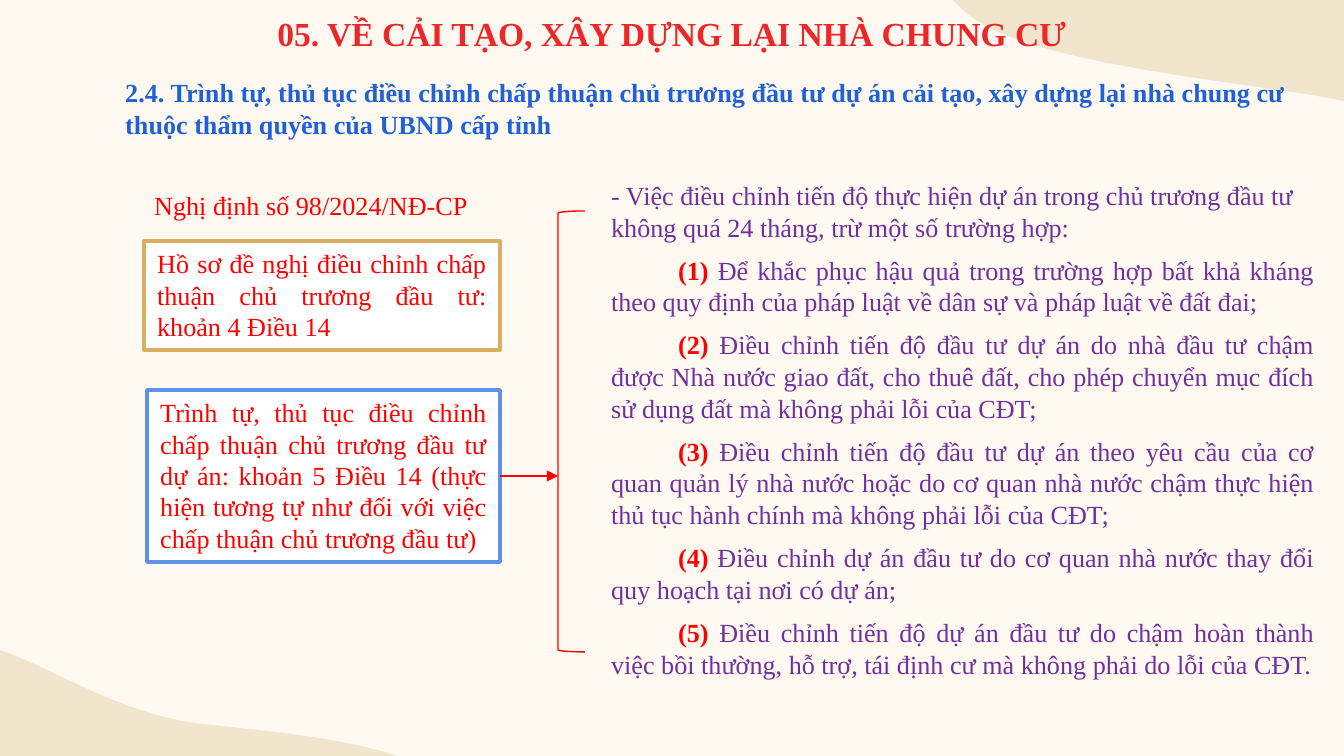
from dataclasses import dataclass

from lxml.etree import SubElement
from pptx import Presentation
from pptx.dml.color import RGBColor
from pptx.enum.shapes import MSO_CONNECTOR, MSO_SHAPE
from pptx.enum.text import MSO_ANCHOR, MSO_AUTO_SIZE, PP_ALIGN
from pptx.oxml.ns import qn
from pptx.util import Pt

SCALE = 914400 / 134.4
SLIDE_W, SLIDE_H = 1344, 756


@dataclass(frozen=True)
class Theme:
    """Colours, font and type sizes of the slide."""
    background: str = "FFF9F1"
    wave: str = "F2E5CE"
    title: str = "ED2727"
    subtitle: str = "2061D6"
    accent: str = "FF0000"
    body: str = "7030A0"
    box_fill: str = "FFFFFF"
    dossier_border: str = "D9AE60"
    procedure_border: str = "6191E7"
    font: str = "Times New Roman"
    title_size: int = 18
    body_size: int = 14


THEME = Theme()

CASES = [
    "Để khắc phục hậu quả trong trường hợp bất khả kháng theo quy định của pháp luật về dân sự và pháp luật về đất đai;",
    "Điều chỉnh tiến độ đầu tư dự án do nhà đầu tư chậm được Nhà nước giao đất, cho thuê đất, cho phép chuyển mục đích sử dụng đất mà không phải lỗi của CĐT;",
    "Điều chỉnh tiến độ đầu tư dự án theo yêu cầu của cơ quan quản lý nhà nước hoặc do cơ quan nhà nước chậm thực hiện thủ tục hành chính mà không phải lỗi của CĐT;",
    "Điều chỉnh dự án đầu tư do cơ quan nhà nước thay đổi quy hoạch tại nơi có dự án;",
    "Điều chỉnh tiến độ dự án đầu tư do chậm hoàn thành việc bồi thường, hỗ trợ, tái định cư mà không phải do lỗi của CĐT.",
]


def px(length):
    """Turn px into EMU."""
    return round(length * SCALE)


def emu(box):
    """Turn a box in px into EMU values."""
    return [px(length) for length in box]


def rgb(colour):
    """Read a hex colour."""
    return RGBColor.from_string(colour)


def style(paragraph, colour, size=THEME.body_size, bold=False, align=PP_ALIGN.LEFT):
    """Set font and alignment of a paragraph."""
    font = paragraph.font
    font.name, font.size, font.bold = THEME.font, Pt(size), bold
    font.color.rgb = rgb(colour)
    paragraph.alignment = align


def add_text(slide, box, text, colour, wrap=True, **styling):
    """Add a text box with one paragraph and return its frame."""
    frame = slide.shapes.add_textbox(*emu(box)).text_frame
    frame.word_wrap = wrap
    frame.auto_size = MSO_AUTO_SIZE.SHAPE_TO_FIT_TEXT
    frame.text = text
    style(frame.paragraphs[0], colour, **styling)
    return frame


def bezier(start, c1, c2, end, steps=24):
    """Return points along a cubic curve, without its start."""
    ts = [step / steps for step in range(1, steps + 1)]
    return [tuple((1 - t) ** 3 * a + 3 * t * (1 - t) ** 2 * b + 3 * t * t * (1 - t) * c + t ** 3 * d
                  for a, b, c, d in zip(start, c1, c2, end)) for t in ts]


def add_wave(slide, origin, lead, curves, closing):
    """Draw a background wave from straight and curved edges."""
    outline = list(lead)
    for c1, c2, end in curves:
        outline += bezier(outline[-1], c1, c2, end)
    outline += closing
    points = [(px(origin[0] + x), px(origin[1] + y)) for x, y in outline]
    builder = slide.shapes.build_freeform(*points[0])
    builder.add_line_segments(points[1:], close=True)
    wave = builder.convert_to_shape()
    wave.shadow.inherit = False
    wave.fill.solid()
    wave.fill.fore_color.rgb = rgb(THEME.wave)
    wave.line.fill.background()


def add_background(slide, box):
    """Paint the background with a wave in two corners of the box."""
    left, top, width, height = box
    slide.background.fill.solid()
    slide.background.fill.fore_color.rgb = rgb(THEME.background)
    add_wave(slide, (left + width - 391, top), [(391, 0), (391, 101)],
             [((380, 99), (370, 97), (359, 95)), ((215, 73), (43, 56), (0, 0))], [])
    add_wave(slide, (left, top + height - 106), [(0, 0)],
             [((52, 18), (120, 63), (195, 73)), ((263, 81), (341, 87), (397, 106))], [(0, 106)])


def add_header(slide, box):
    """Place the title and the section heading."""
    left, top, width, _ = box
    title = add_text(slide, (left, top + 1, width, 65), "05. VỀ CẢI TẠO, XÂY DỰNG LẠI NHÀ CHUNG CƯ",
                     THEME.title, size=THEME.title_size, bold=True, align=PP_ALIGN.CENTER)
    title.auto_size = MSO_AUTO_SIZE.NONE
    title.vertical_anchor = MSO_ANCHOR.BOTTOM
    title.margin_top = title.margin_bottom = px(13)
    add_text(slide, (left + 112, top + 70, 1189, 77),
             "2.4. Trình tự, thủ tục điều chỉnh chấp thuận chủ trương đầu tư dự án cải tạo, xây dựng lại "
             "nhà chung cư thuộc thẩm quyền của UBND cấp tỉnh", THEME.subtitle, bold=True)


def add_framed_text(slide, box, text, border):
    """Add a white rectangle with a coloured border and justified text."""
    rectangle = slide.shapes.add_shape(MSO_SHAPE.RECTANGLE, *emu(box))
    rectangle.shadow.inherit = False
    rectangle.fill.solid()
    rectangle.fill.fore_color.rgb = rgb(THEME.box_fill)
    rectangle.line.color.rgb = rgb(border)
    rectangle.line.width = Pt(2)
    frame = rectangle.text_frame
    frame.word_wrap = True
    frame.auto_size = MSO_AUTO_SIZE.SHAPE_TO_FIT_TEXT
    frame.vertical_anchor = MSO_ANCHOR.TOP
    frame.text = text
    style(frame.paragraphs[0], THEME.accent, align=PP_ALIGN.JUSTIFY)
    return rectangle


def add_decree(slide, box):
    """Place the decree label and its two boxes; return the procedure box."""
    left, top, width, _ = box
    add_text(slide, (left, top, 349, 46), "Nghị định số 98/2024/NĐ-CP", THEME.accent, wrap=False)
    add_framed_text(slide, (left + 3, top + 58, width - 3, 109),
                    "Hồ sơ đề nghị điều chỉnh chấp thuận chủ trương đầu tư: khoản 4 Điều 14",
                    THEME.dossier_border)
    return add_framed_text(slide, (left + 6, top + 207, width - 6, 172),
                           "Trình tự, thủ tục điều chỉnh chấp thuận chủ trương đầu tư dự án: khoản 5 Điều 14 "
                           "(thực hiện tương tự như đối với việc chấp thuận chủ trương đầu tư)",
                           THEME.procedure_border)


def add_link(slide, box, procedure):
    """Draw the bracket in the box and the arrow from the procedure to it."""
    bracket = slide.shapes.add_shape(MSO_SHAPE.LEFT_BRACKET, *emu(box))
    bracket.shadow.inherit = False
    bracket.fill.background()
    middle = procedure.top + procedure.height // 2
    arrow = slide.shapes.add_connector(MSO_CONNECTOR.STRAIGHT, procedure.left + procedure.width, middle,
                                       bracket.left, middle)
    arrow.begin_connect(procedure, 3)
    for outline in (bracket.line, arrow.line):
        outline.color.rgb = rgb(THEME.accent)
        outline.width = Pt(0.75)
    SubElement(arrow.line._get_or_add_ln(), qn("a:tailEnd"), type="triangle")
    SubElement(arrow._element.spPr, qn("a:effectLst"))


def add_cases(slide, box):
    """Place the rule and its numbered exceptions."""
    frame = add_text(slide, box, "- Việc điều chỉnh tiến độ thực hiện dự án trong chủ trương đầu tư "
                     "không quá 24 tháng, trừ một số trường hợp:", THEME.body)
    for number, case in enumerate(CASES, 1):
        paragraph = frame.add_paragraph()
        style(paragraph, THEME.body, align=PP_ALIGN.JUSTIFY)
        paragraph.line_spacing, paragraph.space_before = Pt(17), Pt(6)
        properties = paragraph._p.get_or_add_pPr()
        properties.set("marL", "0")
        properties.set("indent", str(px(67)))
        marker = paragraph.add_run()
        marker.text = f"({number}) "
        marker.font.bold = True
        marker.font.color.rgb = rgb(THEME.accent)
        paragraph.add_run().text = case


def main():
    """Build and save the slide."""
    presentation = Presentation()
    presentation.slide_width, presentation.slide_height = px(SLIDE_W), px(SLIDE_H)
    slide = presentation.slides.add_slide(presentation.slide_layouts[6])
    add_background(slide, (0, 0, SLIDE_W, SLIDE_H))
    add_header(slide, (0, 0, SLIDE_W, 147))
    add_cases(slide, (598, 173, 730, 517))
    procedure = add_decree(slide, (141, 183, 359, 379))
    add_link(slide, (558, 211, 27, 441), procedure)
    presentation.save("out.pptx")


if __name__ == "__main__":
    main()
